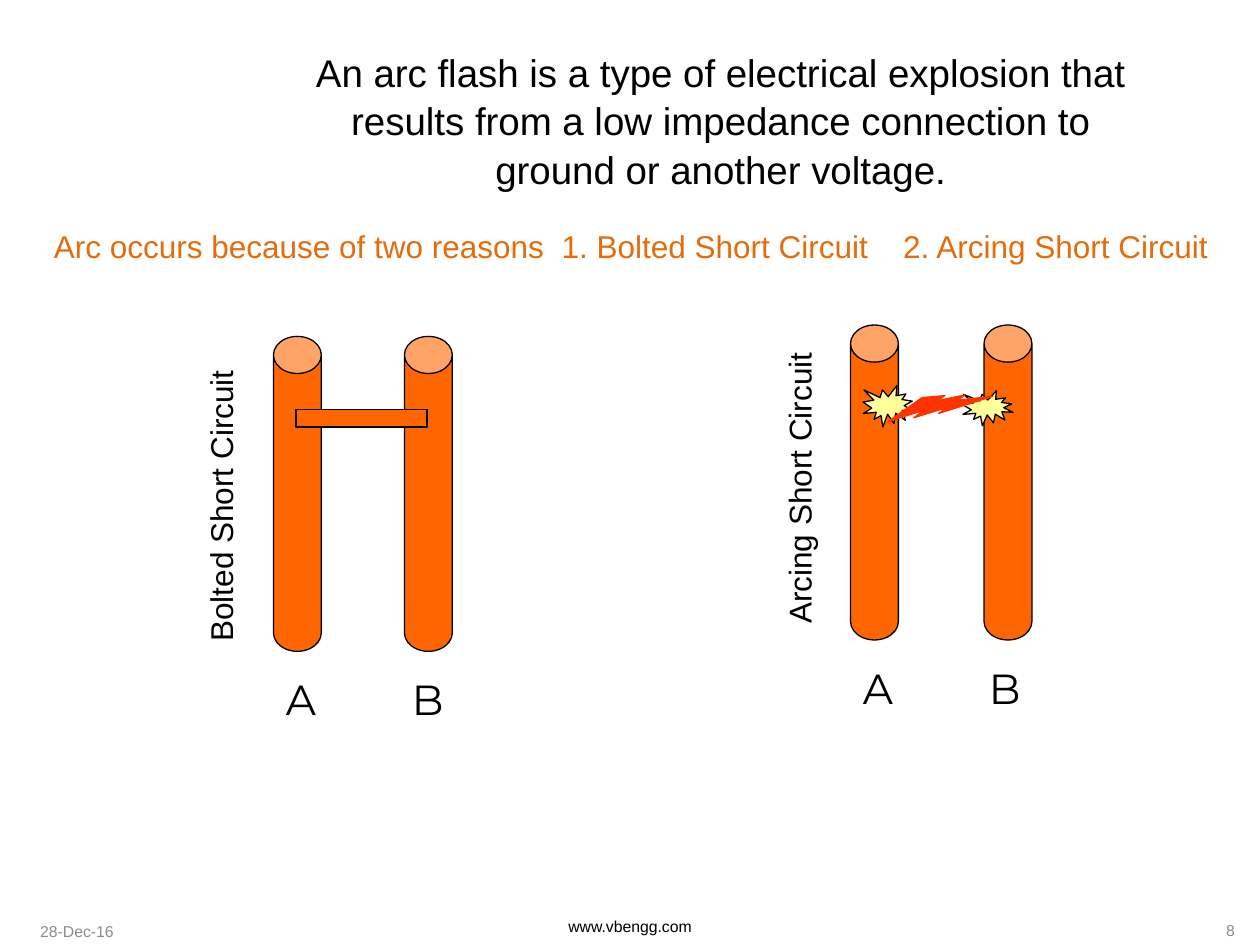
from lxml import etree
from pptx import Presentation
from pptx.dml.color import RGBColor
from pptx.enum.shapes import MSO_SHAPE
from pptx.enum.text import MSO_ANCHOR, MSO_AUTO_SIZE, PP_ALIGN
from pptx.oxml.ns import qn
from pptx.util import Inches, Pt

CAN, BAR = MSO_SHAPE.CAN, MSO_SHAPE.RECTANGLE
SPARK, BOLT = MSO_SHAPE.EXPLOSION1, MSO_SHAPE.LIGHTNING_BOLT
LEFT, MID, RIGHT = PP_ALIGN.LEFT, PP_ALIGN.CENTER, PP_ALIGN.RIGHT
TOP, CENTER = MSO_ANCHOR.TOP, MSO_ANCHOR.MIDDLE
COLORS = {
    "ink": "000000",
    "rod": "FF6600",
    "spark": "FFFF99",
    "bolt": "FF3300",
    "reason": "E46C0A",
    "muted": "8C8C8C",
}


def color(key):
    return RGBColor.from_string(COLORS[key])


def place(shape, x, y, w, h):
    shape.left, shape.top = Inches(x), Inches(y)
    shape.width, shape.height = Inches(w), Inches(h)


def write(shape, text, size, ink="ink", face="Arial", align=LEFT,
          anchor=TOP, wrap=True, space=None):
    frame = shape.text_frame
    frame.text = text
    frame.word_wrap = wrap
    frame.auto_size = MSO_AUTO_SIZE.NONE
    frame.vertical_anchor = anchor
    para = frame.paragraphs[0]
    para.alignment = align
    if space:
        para.line_spacing = space
    for run in para.runs:
        run.font.size = Pt(size)
        run.font.name = face
        run.font.color.rgb = color(ink)


def add_text(home, box, text, size, **style):
    shape = home.add_textbox(*map(Inches, box))
    write(shape, text, size, **style)
    return shape


def add_part(home, kind, box, fill, line="ink"):
    part = home.add_shape(kind, *map(Inches, box))
    part.shadow.inherit = False
    part.fill.solid()
    part.fill.fore_color.rgb = color(fill)
    part.line.color.rgb = color(line)
    part.line.width = Pt(0.75)
    return part


def add_tabs(shape, stops):
    props = shape.text_frame.paragraphs[0]._p.get_or_add_pPr()
    tabs = etree.SubElement(props, qn("a:tabLst"))
    for stop in stops:
        etree.SubElement(tabs, qn("a:tab"), pos=str(Inches(stop)), algn="l")


def add_rods(slide, x, y, gap):
    """Two conductors, lettered below, in a group that takes more parts."""
    home = slide.shapes.add_group_shape().shapes
    for i, name in enumerate("AB"):
        add_text(home, (x + i, y + 2.63, 0.46, 0.5), name, 24,
                 face="Montserrat", wrap=False)
        rod = add_part(home, CAN, (x + i * gap, y, 0.38, 2.5), "rod")
        rod.adjustments[0] = 0.776
    return home


def add_side(slide, box, text):
    side = add_text(slide.shapes, box, text, 18, align=MID, space=0.9)
    side.rotation = 270


def main():
    deck = Presentation()
    deck.slide_width, deck.slide_height = Inches(10), Inches(7.5)
    slide = deck.slides.add_slide(deck.slide_layouts[5])

    # Heading
    title = slide.shapes.title
    place(title, 2.27, 0.32, 6.9, 1.57)
    write(title, "An arc flash is a type of electrical explosion that results "
          "from a low impedance connection to ground or another voltage.",
          22, align=MID, space=1.05)

    # Bolted short circuit
    bolted = add_rods(slide, 2.17, 2.67, 1.04)
    add_part(bolted, BAR, (2.35, 3.25, 1.04, 0.14), "rod")

    # Arcing short circuit
    arcing = add_rods(slide, 6.75, 2.58, 1.06)
    add_part(arcing, SPARK, (7.64, 3.1, 0.4, 0.28), "spark")
    add_part(arcing, SPARK, (6.85, 3.06, 0.4, 0.33), "spark")
    bolt = add_part(arcing, BOLT, (7.04, 3.1, 0.83, 0.25), "bolt", "bolt")
    bolt.rotation = 332.6

    # Reasons, set on tab stops
    reasons = add_text(slide.shapes, (0.33, 1.75, 9.67, 0.4),
                       "Arc occurs because of two reasons\t"
                       "1. Bolted Short Circuit\t2. Arcing Short Circuit",
                       18, ink="reason")
    add_tabs(reasons, (4.03, 6.74))

    # Side labels
    add_side(slide, (0.58, 3.83, 2.38, 0.37), "Bolted Short Circuit")
    add_side(slide, (5.15, 3.69, 2.42, 0.37), "Arcing Short Circuit")

    # Footer
    for box, text, ink, align in (
        ((0.22, 7.19, 2.25, 0.4), "28-Dec-16", "muted", LEFT),
        ((3.31, 7.15, 3.38, 0.4), "www.vbengg.com", "ink", MID),
        ((7.65, 7.19, 2.25, 0.38), "8", "muted", RIGHT),
    ):
        add_text(slide.shapes, box, text, 9, ink=ink, align=align,
                 anchor=CENTER)

    deck.save("out.pptx")


if __name__ == "__main__":
    main()
